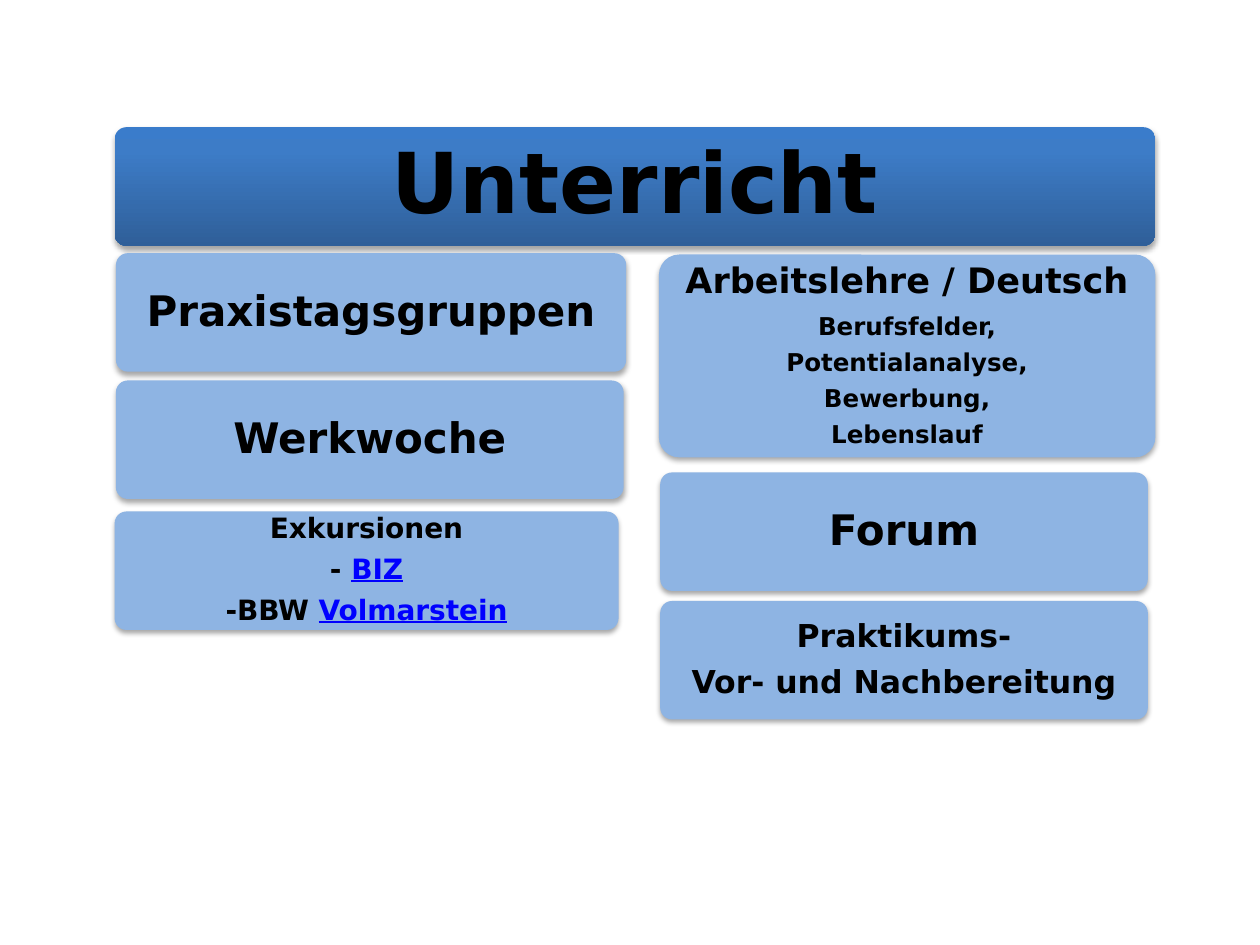
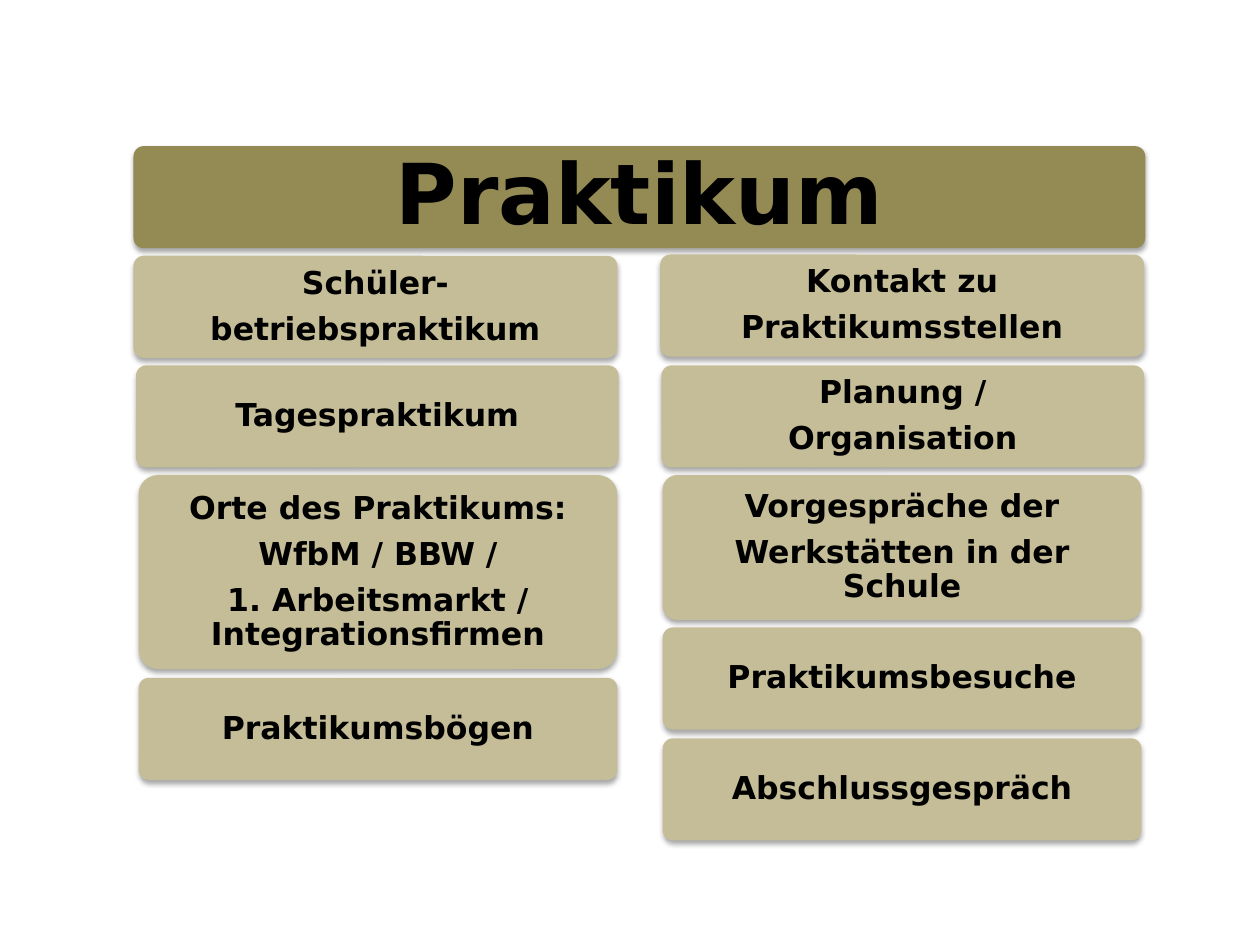
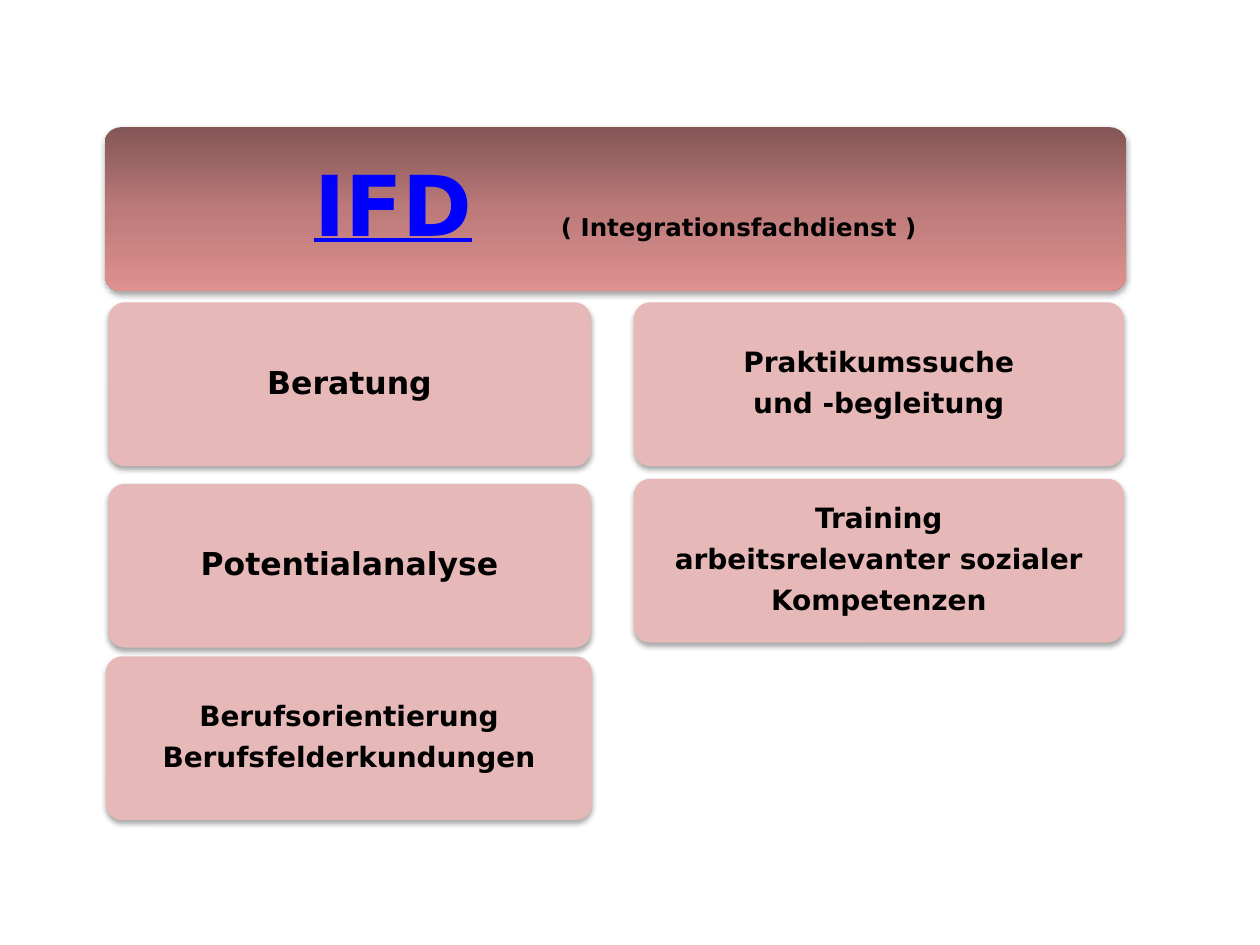
"""Build three overview slides: a title banner above two columns of cards."""
from copy import deepcopy
from dataclasses import dataclass

from lxml.etree import SubElement
from pptx import Presentation
from pptx.dml.color import RGBColor
from pptx.enum.shapes import MSO_SHAPE
from pptx.enum.text import MSO_ANCHOR, MSO_AUTO_SIZE, PP_ALIGN
from pptx.oxml.ns import qn
from pptx.util import Inches, Pt

BLACK = RGBColor(0x00, 0x00, 0x00)
LINK_BLUE = RGBColor(0x00, 0x00, 0xFF)
BLUE = RGBColor(0x8E, 0xB4, 0xE3)
OLIVE = RGBColor(0x94, 0x8A, 0x54)
SAND = RGBColor(0xC4, 0xBD, 0x97)
ROSE = RGBColor(0xE6, 0xB9, 0xB8)
BLUE_FADE = [
    (0, RGBColor(0x3A, 0x7C, 0xCB)),
    (0.2, RGBColor(0x3D, 0x7C, 0xC7)),
    (1, RGBColor(0x2F, 0x5F, 0x99)),
]
ROSE_FADE = [
    (0, RGBColor(0x84, 0x56, 0x55)),
    (0.5, RGBColor(0xBB, 0x7A, 0x79)),
    (1, RGBColor(0xDE, 0x91, 0x8F)),
]

FONT = "DejaVu Sans"
TITLE_SIZE = 48
CORNER = 0.1
LINE_SPACING = 0.9
SPACE_AFTER = 0.38
TITLE_LAYOUT = 5


@dataclass
class Words:
    """A run of text that differs from the rest of its box."""
    text: str
    size: int = 0
    link: bool = False
    tracking: int = 0


@dataclass
class Card:
    """A box in a column, placed below the box before it."""
    lines: list
    size: int
    left: float
    width: float
    gap: float = 0.06
    height: float = 0


@dataclass
class Topic:
    """One slide: its banner and its columns of cards."""
    title: list
    banner: tuple
    banner_fill: object
    card_fill: RGBColor
    columns: list


TOPICS = [
    Topic(["Unterricht"], (0.91, 1.01, 8.26, 0.94), BLUE_FADE, BLUE, [
        [
            Card(["Praxistagsgruppen"], 24, 0.92, 4.05),
            Card(["Werkwoche"], 24, 0.92, 4.03, gap=0.07),
            Card(["Exkursionen", ["- ", Words("BIZ", link=True)],
                  ["-BBW ", Words("Volmarstein", link=True)]],
                 16, 0.91, 4, gap=0.1),
        ],
        [
            Card([[Words("Arbeitslehre / Deutsch", size=20)], "Berufsfelder,",
                  "Potentialanalyse,", "Bewerbung,", "Lebenslauf"],
                 14, 5.23, 3.94, gap=0.07, height=1.61),
            Card(["Forum"], 24, 5.24, 3.87, gap=0.12),
            Card(["Praktikums-", "Vor- und Nachbereitung"], 18, 5.24, 3.87, gap=0.08),
        ],
    ]),
    Topic(["Praktikum"], (1.06, 1.16, 8.03, 0.81), OLIVE, SAND, [
        [
            Card(["Schüler-", "betriebspraktikum"], 18, 1.06, 3.84),
            Card(["Tagespraktikum"], 18, 1.08, 3.83),
            Card(["Orte des Praktikums:", "WfbM / BBW /",
                  "1. Arbeitsmarkt / Integrationsfirmen"],
                 18, 1.1, 3.8, height=1.54),
            Card(["Praktikumsbögen"], 18, 1.1, 3.8, gap=0.07),
        ],
        [
            Card(["Kontakt zu", "Praktikumsstellen"], 18, 5.24, 3.84, gap=0.05),
            Card(["Planung /", "Organisation"], 18, 5.25, 3.83, gap=0.07),
            Card(["Vorgespräche der", "Werkstätten in der Schule"],
                 18, 5.26, 3.8, height=1.15),
            Card(["Praktikumsbesuche"], 18, 5.26, 3.8),
            Card(["Abschlussgespräch"], 18, 5.26, 3.8, gap=0.07),
        ],
    ]),
    Topic([Words("IFD", link=True), Words(" ", size=36, tracking=38),
           Words("( Integrationsfachdienst )", size=14)],
          (0.83, 1.01, 8.11, 1.3), ROSE_FADE, ROSE, [
        [
            Card(["Beratung"], 18, 0.86, 3.83, gap=0.09),
            Card(["Potentialanalyse"], 18, 0.86, 3.83, gap=0.14),
            Card(["Berufsorientierung", "Berufsfelderkundungen"],
                 16, 0.84, 3.86, gap=0.07),
        ],
        [
            Card(["Praktikumssuche", "und -begleitung"], 16, 5.03, 3.89, gap=0.09),
            Card(["Training", "arbeitsrelevanter sozialer", "Kompetenzen"],
                 16, 5.03, 3.89, gap=0.1),
        ],
    ]),
]


def add_shadow(box):
    """Give a box a soft shadow straight below it."""
    box.shadow.inherit = False
    effects = box.element.spPr.find(qn("a:effectLst"))
    shadow = SubElement(effects, qn("a:outerShdw"), blurRad=str(Pt(3.1)),
                        dist=str(Pt(1.8)), dir="5400000", rotWithShape="0")
    colour = SubElement(shadow, qn("a:srgbClr"), val=str(BLACK))
    SubElement(colour, qn("a:alpha"), val="35000")


def fade(box, stops):
    """Fill a box with three colours from top to bottom."""
    box.fill.gradient()
    box.fill.gradient_angle = 270
    stop_list = box.element.spPr.find(".//" + qn("a:gsLst"))
    stop_list.insert(1, deepcopy(stop_list[0]))
    for stop, (position, colour) in zip(box.fill.gradient_stops, stops):
        stop.position = position
        stop.color.rgb = colour


def add_box(slide, place, fill):
    """Add a rounded box with a shadow."""
    box = slide.shapes.add_shape(MSO_SHAPE.ROUNDED_RECTANGLE, *map(Inches, place))
    box.adjustments[0] = CORNER
    if isinstance(fill, RGBColor):
        box.fill.solid()
        box.fill.fore_color.rgb = fill
    else:
        fade(box, fill)
    box.line.fill.background()
    add_shadow(box)
    return box


def write(frame, lines, size, side, edge):
    """Write centred bold lines into a text frame."""
    frame.word_wrap = True
    frame.auto_size = MSO_AUTO_SIZE.NONE
    frame.vertical_anchor = MSO_ANCHOR.MIDDLE
    frame.margin_left = frame.margin_right = Inches(side)
    frame.margin_top = frame.margin_bottom = Inches(edge)
    for number, line in enumerate(lines):
        paragraph = frame.paragraphs[0] if number == 0 else frame.add_paragraph()
        pieces = [line] if isinstance(line, str) else line
        pieces = [Words(piece) if isinstance(piece, str) else piece for piece in pieces]
        paragraph.alignment = PP_ALIGN.CENTER
        paragraph.line_spacing = LINE_SPACING
        if number < len(lines) - 1:
            largest = max(piece.size or size for piece in pieces)
            paragraph.space_after = Pt(largest * SPACE_AFTER)
        for piece in pieces:
            run = paragraph.add_run()
            run.text = piece.text
            run.font.name = FONT
            run.font.size = Pt(piece.size or size)
            run.font.bold = True
            run.font.underline = piece.link
            run.font.color.rgb = LINK_BLUE if piece.link else BLACK
            if piece.tracking:
                run.font._element.set("spc", str(piece.tracking * 100))


def add_topic(deck, topic):
    """Add the slide of one topic."""
    slide = deck.slides.add_slide(deck.slide_layouts[TITLE_LAYOUT])
    left, top, width, height = topic.banner
    banner = add_box(slide, topic.banner, topic.banner_fill)
    title = slide.shapes.title
    title.left, title.top, title.width, title.height = map(Inches, topic.banner)
    banner.element.addnext(title.element)
    write(title.text_frame, [topic.title], TITLE_SIZE, 0.2, 0)
    for column in topic.columns:
        bottom = top + height
        for card in column:
            card_top = bottom + card.gap
            card_height = card.height or height
            box = add_box(slide, (card.left, card_top, card.width, card_height),
                          topic.card_fill)
            inset = card.size / 240
            write(box.text_frame, card.lines, card.size, inset, inset)
            bottom = card_top + card_height


def main():
    """Build and save the deck."""
    deck = Presentation()
    deck.slide_width, deck.slide_height = Inches(10), Inches(7.5)
    for topic in TOPICS:
        add_topic(deck, topic)
    deck.save("out.pptx")


if __name__ == "__main__":
    main()
